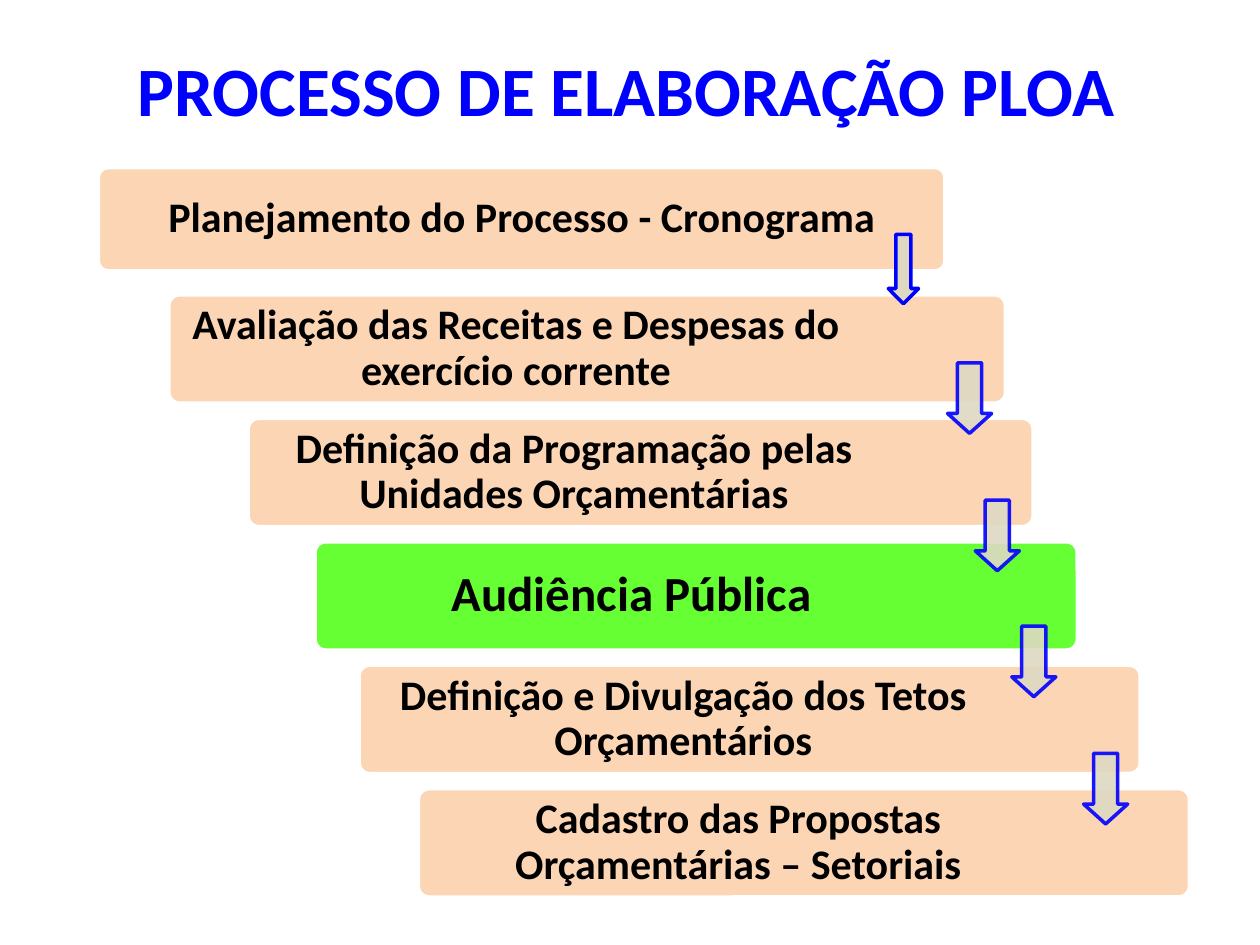
import pptx
import pptx.dml.color
import pptx.enum.shapes
import pptx.enum.text
import pptx.oxml
import pptx.oxml.ns
import pptx.util

Inches = pptx.util.Inches
Pt = pptx.util.Pt
RGBColor = pptx.dml.color.RGBColor
Shape = pptx.enum.shapes.MSO_SHAPE
Align = pptx.enum.text.PP_ALIGN
Anchor = pptx.enum.text.MSO_ANCHOR

BLUE = RGBColor(0x00, 0x00, 0xFF)
PEACH = RGBColor(0xFC, 0xD5, 0xB5)
GREEN = RGBColor(0x66, 0xFF, 0x33)
SAND = RGBColor(0xDD, 0xD9, 0xC3)
WHITE = RGBColor(0xFF, 0xFF, 0xFF)
BLACK = RGBColor(0x00, 0x00, 0x00)

FONT = "Calibri"
STEP_TOP, STEP_PITCH, STEP_HEIGHT = 2.34, 0.98, 0.86
LABEL_SHARE = 0.83  # part of a bar's width left of the arrows

# Left, width, fill, text size, text
STEPS = [
    (1.34, 6.64, PEACH, 24, "Avaliação das Receitas e Despesas do exercício corrente"),
    (1.97, 6.23, PEACH, 24, "Definição da Programação pelas Unidades Orçamentárias"),
    (2.5, 6.05, GREEN, 28, "Audiência Pública"),
    (2.85, 6.2, PEACH, 24, "Definição e Divulgação dos Tetos Orçamentários"),
    (3.32, 6.12, PEACH, 24, "Cadastro das Propostas Orçamentárias – Setoriais"),
]
ARROWS = [(7.52, 2.88), (7.74, 3.97), (8.03, 4.97), (8.6, 5.98)]


def write_text(frame, text, size, color):
    frame.word_wrap = True
    frame.vertical_anchor = Anchor.MIDDLE
    frame.text = text
    para = frame.paragraphs[0]
    para.alignment = Align.CENTER
    font = para.runs[0].font
    font.name, font.size, font.bold = FONT, Pt(size), True
    font.color.rgb = color
    return para


def add_filled(shapes, kind, box, fill, line, adjustments):
    shape = shapes.add_shape(kind, *map(Inches, box))
    shape.shadow.inherit = False
    shape.fill.solid()
    shape.fill.fore_color.rgb = fill
    shape.line.color.rgb = line
    shape.line.width = Pt(2)
    for index, value in enumerate(adjustments):
        shape.adjustments[index] = value
    return shape


def add_title(page, box):
    title = page.shapes.title
    title.left, title.top, title.width, title.height = map(Inches, box)
    write_text(title.text_frame, "PROCESSO DE ELABORAÇÃO PLOA", 39.6, BLUE)


def add_step(shapes, box, fill, size, text, label_share=LABEL_SHARE):
    left, top, width, height = box
    add_filled(shapes, Shape.ROUNDED_RECTANGLE, box, fill, WHITE, [0.1])
    label = shapes.add_textbox(*map(Inches, (left, top, width * label_share, height)))
    frame = label.text_frame
    inset = Inches(0.1 if size == 24 else 0.12)
    frame.margin_left = frame.margin_right = inset
    frame.margin_top = frame.margin_bottom = inset
    write_text(frame, text, size, BLACK).line_spacing = 0.9


def add_arrow(shapes, box, adjustments=(0.5, 0.5), opacity=100):
    arrow = add_filled(shapes, Shape.DOWN_ARROW, box, SAND, BLUE, adjustments)
    if opacity < 100:
        for color in arrow.element.spPr.iter(pptx.oxml.ns.qn("a:srgbClr")):
            alpha = pptx.oxml.parse_xml(f'<a:alpha {pptx.oxml.ns.nsdecls("a")}/>')
            alpha.set("val", str(opacity * 1000))
            color.append(alpha)


def add_cascade(page):
    # Steps going down to the right, then the arrows over them
    cascade = page.shapes.add_group_shape().shapes
    for index, (left, width, fill, size, text) in enumerate(STEPS):
        box = (left, STEP_TOP + index * STEP_PITCH, width, STEP_HEIGHT)
        add_step(cascade, box, fill, size, text)
    for left, top in ARROWS:
        add_arrow(cascade, (left, top, 0.35, 0.56), (0.55, 0.45), opacity=90)


def add_opening(page, box):
    # First step, with the arrow that leads into the cascade
    opening = page.shapes.add_group_shape().shapes
    add_step(opening, box, PEACH, 24, "Planejamento do Processo - Cronograma", label_share=1)
    left, top, width, _ = box
    add_arrow(page.shapes, (left + width - 0.45, top + 0.53, 0.24, 0.55))


def main():
    deck = pptx.Presentation()
    deck.slide_width, deck.slide_height = Inches(10), Inches(7.5)
    page = deck.slides.add_slide(deck.slide_layouts.get_by_name("Title Only"))
    add_title(page, (0.47, 0.47, 9, 0.47))
    add_cascade(page)
    add_opening(page, (0.78, 1.33, 6.72, 0.82))
    deck.save("out.pptx")


if __name__ == "__main__":
    main()
